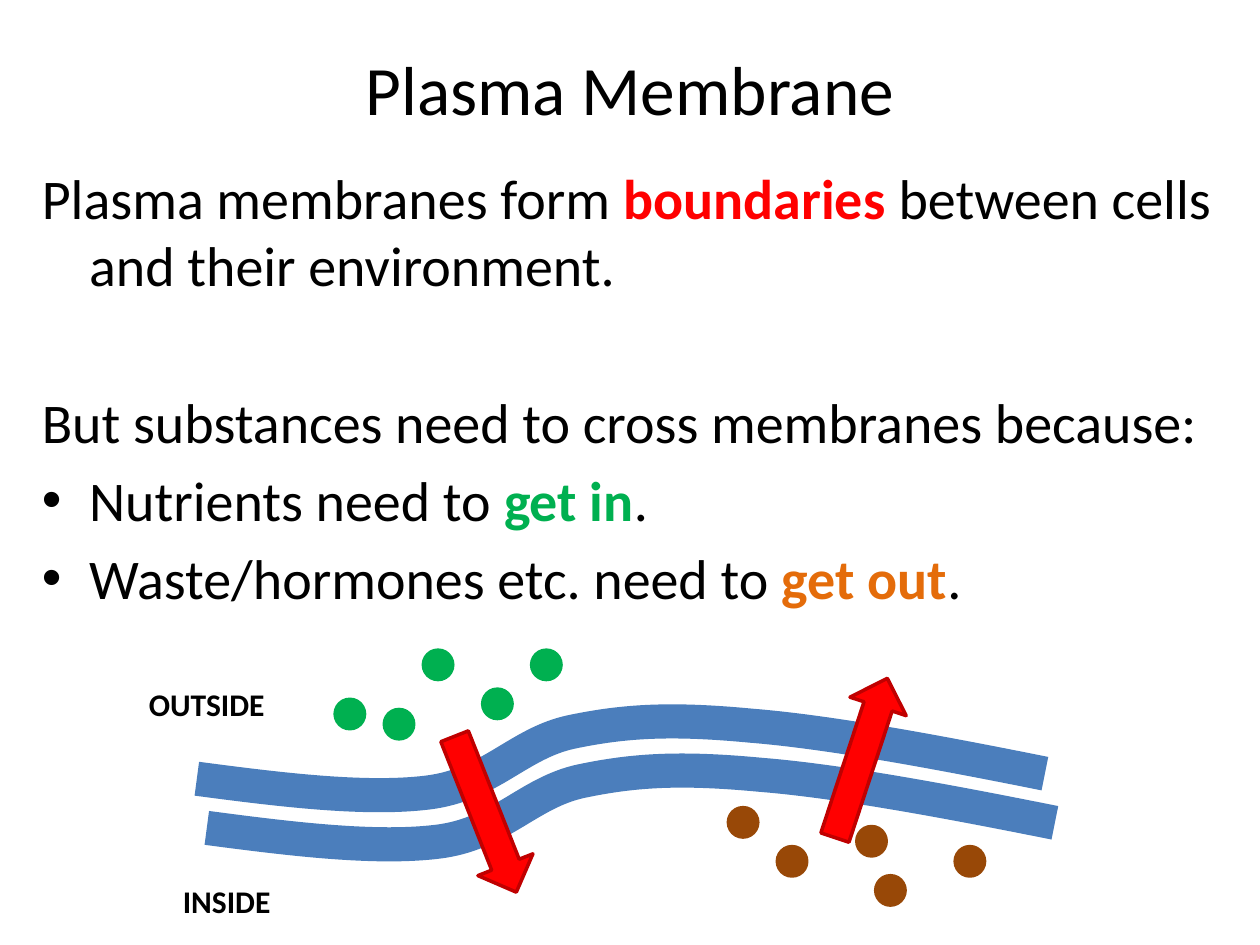
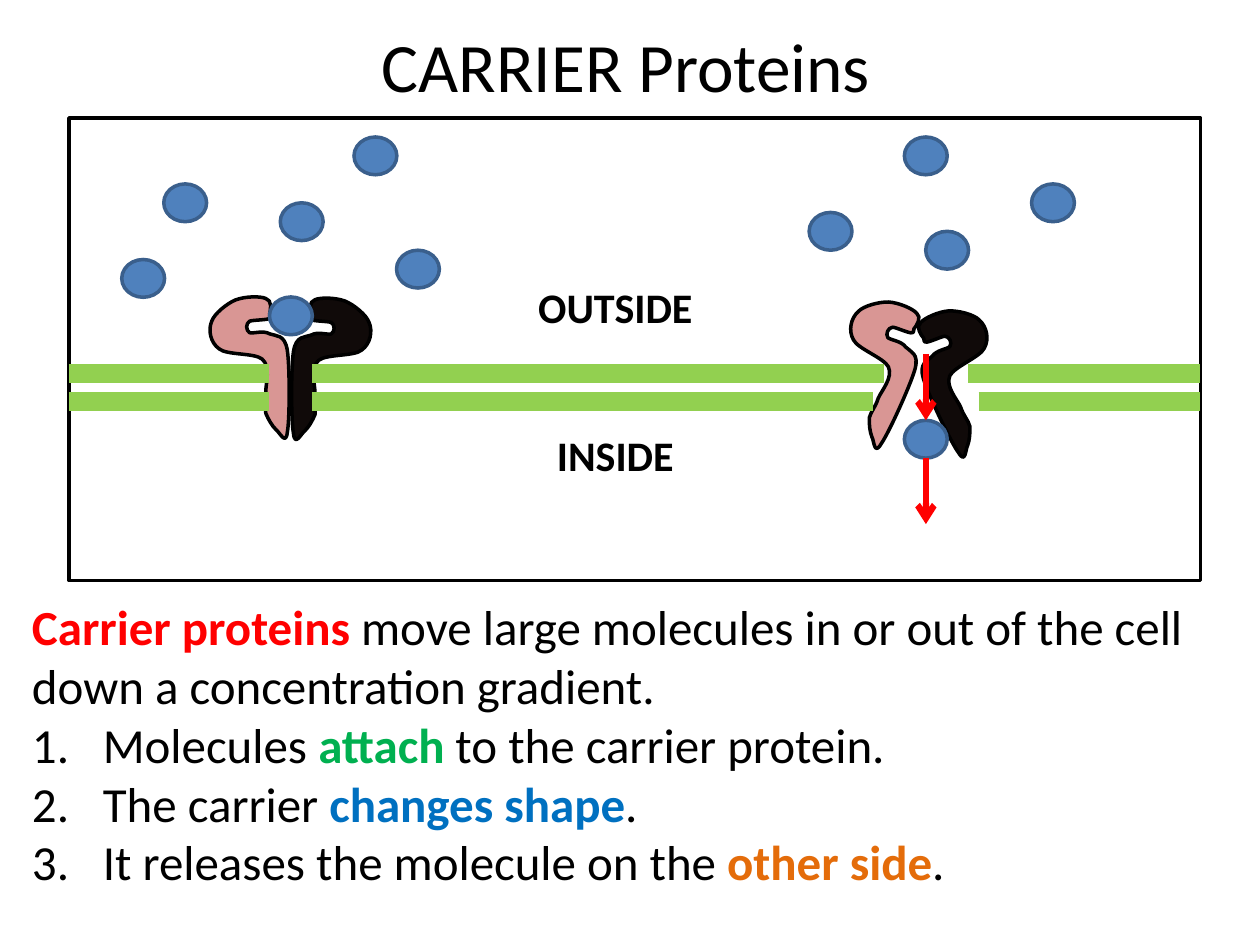
from lxml import etree
from pptx import Presentation
from pptx.dml.color import RGBColor
from pptx.enum import shapes, text
from pptx.oxml import ns
from pptx.util import Pt

FONT = "Calibri"
BLACK, RED, GREEN, ORANGE = "000000", "FF0000", "00B050", "E46C0A"
DARK_RED, BROWN, BLUE = "C00000", "984807", "0070C0"
LIPID_BLUE, LIPID_GREEN = "4B7EBC", "92D050"
MOLECULE, MOLECULE_EDGE = "4F81BD", "3A5F8C"
PINK, PROTEIN_BLACK = "D99694", "100A09"

# Bezier outlines: a start point, then three points for each curve.
LIPID_CURVE = [
    (0, 34.6),
    (48.3, 41), (96.5, 46.8), (131.8, 42.5),
    (167.8, 38.2), (183.6, 14.4), (213.9, 7.9),
    (244.8, 1.4), (271.5, 0), (316.8, 4.3),
    (361.5, 7.9), (423.4, 19.4), (484.6, 31.7),
]
CARRIER_HALF = [
    (33.1, 1.4),
    (30.2, 0), (21.6, 0), (15.8, 2.2),
    (10.8, 4.3), (3.6, 10.1), (2.2, 14.4),
    (0, 19.4), (1.4, 26.6), (6.5, 30.2),
    (10.8, 33.8), (26.6, 32.4), (31, 36),
    (36, 40.3), (33.1, 49.7), (33.1, 54.7),
    (33.8, 59.8), (32.4, 63.4), (33.1, 67),
    (34.6, 70.6), (36.7, 74.2), (38.9, 76.3),
    (41, 77.8), (44.6, 85.7), (45.4, 77.8),
    (46.8, 70.6), (46.8, 40.3), (45.4, 31),
    (43.9, 21.6), (38.9, 23), (35.3, 21.6),
    (31.7, 19.4), (25.9, 21.6), (23.8, 20.9),
    (21.6, 19.4), (21.6, 15.8), (23.8, 14.4),
    (25.2, 13.7), (32.4, 13.7), (34.6, 13),
    (36.7, 12.2), (35.3, 11.5), (35.3, 10.1),
    (36, 7.9), (36.7, 2.2), (33.1, 1.4),
]


def rgb(color):
    return RGBColor.from_string(color)


def paint(shape, fill=None, line=None, weight=2):
    shape.shadow.inherit = False
    if fill:
        shape.fill.solid()
        shape.fill.fore_color.rgb = rgb(fill)
    else:
        shape.fill.background()
    shape.line.color.rgb = rgb(line)
    shape.line.width = Pt(weight)


def add_bullet(paragraph, bullet):
    """Bullet with a character, or number automatically if it is '1.'."""
    properties = paragraph._p.get_or_add_pPr()
    if bullet == "1.":
        etree.SubElement(properties, ns.qn("a:buAutoNum"), type="arabicPeriod")
    else:
        etree.SubElement(properties, ns.qn("a:buFont"), typeface="Arial")
        etree.SubElement(properties, ns.qn("a:buChar"), char=bullet)


def add_text(slide, box, paragraphs, size, bold=False, centred=False, middle=False):
    """Each paragraph is a dict: runs of (words, accent colour or None), and
    optionally hang, before and bullet. Accented runs are bold."""
    frame = slide.shapes.add_textbox(*map(Pt, box)).text_frame
    frame.word_wrap = True
    if middle:
        frame.vertical_anchor = text.MSO_ANCHOR.MIDDLE
    for index, content in enumerate(paragraphs):
        paragraph = frame.add_paragraph() if index else frame.paragraphs[0]
        if centred:
            paragraph.alignment = text.PP_ALIGN.CENTER
        paragraph.space_before = Pt(content.get("before", 0))
        hang = content.get("hang")
        if hang:
            properties = paragraph._p.get_or_add_pPr()
            properties.set("marL", str(Pt(hang)))
            properties.set("indent", str(-Pt(hang)))
        if "bullet" in content:
            add_bullet(paragraph, content["bullet"])
        for words, accent in content["runs"]:
            run = paragraph.add_run()
            run.text = words
            run.font.name = FONT
            run.font.size = Pt(size)
            run.font.bold = bold or accent is not None
            run.font.color.rgb = rgb(accent or BLACK)


def add_title(slide, words, box):
    add_text(slide, box, [{"runs": [(words, None)]}], 39.6, centred=True, middle=True)


def add_label(slide, words, box, size):
    add_text(slide, box, [{"runs": [(words, None)]}], size, bold=True, centred=True)


def add_particles(slide, places, width, height, fill, line):
    for left, top in places:
        particle = slide.shapes.add_shape(
            shapes.MSO_SHAPE.OVAL, Pt(left), Pt(top), Pt(width), Pt(height))
        paint(particle, fill, line)


def add_block_arrow(slide, left, top, angle):
    arrow = slide.shapes.add_shape(
        shapes.MSO_SHAPE.RIGHT_ARROW, Pt(left), Pt(top), Pt(95.8), Pt(33.8))
    arrow.rotation = angle
    paint(arrow, RED, DARK_RED)


def add_line(slide, start, end, color, weight, arrow=False):
    line = slide.shapes.add_connector(
        shapes.MSO_CONNECTOR.STRAIGHT, *map(Pt, (*start, *end)))
    line.line.color.rgb = rgb(color)
    line.line.width = Pt(weight)
    if arrow:
        etree.SubElement(line.line._get_or_add_ln(), ns.qn("a:tailEnd"), type="arrow")
    etree.SubElement(line._element.spPr, ns.qn("a:effectLst"))


def add_curve(slide, curve, left, top, close=False, **colours):
    """Build the outline from its points, then join each three as a Bezier curve."""
    corners = [(Pt(left + x), Pt(top + y)) for x, y in curve]
    builder = slide.shapes.build_freeform(*corners[0])
    builder.add_line_segments(corners[1:], close=close)
    outline = builder.convert_to_shape()
    segments = list(outline._element.iter(ns.qn("a:lnTo")))
    for first in range(0, len(curve) - 1, 3):
        bezier = etree.Element(ns.qn("a:cubicBezTo"))
        segments[first].addprevious(bezier)
        for segment in segments[first:first + 3]:
            bezier.append(segment[0])
            segment.getparent().remove(segment)
    paint(outline, **colours)
    return outline


def add_carrier_half(slide, left, top, fill, mirrored=False, angle=0):
    half = add_curve(slide, CARRIER_HALF, left, top, close=True, fill=fill, line=BLACK)
    half.rotation = angle
    if mirrored:
        half._element.spPr.find(ns.qn("a:xfrm")).set("flipH", "1")


def build_plasma_membrane(slide):
    add_title(slide, "Plasma Membrane", (36, 21.6, 648, 56.9))
    hang = {"hang": 27, "before": 6.4}
    add_text(slide, (16.8, 90, 686, 433.4), [
        {**hang, "runs": [("Plasma membranes form ", None), ("boundaries", RED),
                          (" between cells and their environment.", None)]},
        {**hang, "before": 50.8,
         "runs": [("But substances need to cross membranes because:", None)]},
        {**hang, "bullet": "•",
         "runs": [("Nutrients need to ", None), ("get in", GREEN), (".", None)]},
        {**hang, "bullet": "•",
         "runs": [("Waste/hormones etc. need to ", None), ("get out", ORANGE),
                  (".", None)]},
    ], 32)
    for left, top in ((112.5, 410.4), (118.2, 438.5)):
        add_curve(slide, LIPID_CURVE, left, top, line=LIPID_BLUE, weight=19.5)
    nutrients = [(191.5, 399.6), (275.8, 393.8), (219.6, 405.4),
                 (303.8, 371.5), (241.9, 371.5)]
    wastes = [(444.2, 483.8), (500.4, 500.4), (416.2, 461.5),
              (489.6, 472.3), (545.8, 483.8)]
    for places, color in ((nutrients, GREEN), (wastes, BROWN)):
        add_particles(slide, places, 16.8, 16.8, color, color)
    add_block_arrow(slide, 229.5, 448.4, 68.4)
    add_block_arrow(slide, 444.2, 416.2, 288.2)
    add_label(slide, "OUTSIDE", (62, 388.1, 112.3, 28.8), 18)
    add_label(slide, "INSIDE", (73.4, 500.4, 112.3, 28.8), 18)


def build_carrier_proteins(slide):
    add_title(slide, "CARRIER Proteins", (33.8, 11.2, 648, 51.8))
    left, width = 39.4, 646.6
    right = left + width
    diagram = slide.shapes.add_shape(
        shapes.MSO_SHAPE.RECTANGLE, Pt(left), Pt(67.4), Pt(width), Pt(264.4))
    paint(diagram, line=BLACK)

    add_carrier_half(slide, 118.8, 169.2, PINK)
    add_carrier_half(slide, 166.3, 169.9, PROTEIN_BLACK, mirrored=True)
    add_carrier_half(slide, 474.5, 169.9, PINK, angle=24.4)
    add_carrier_half(slide, 529.2, 174.8, PROTEIN_BLACK, mirrored=True, angle=334.6)

    molecules = [(154, 169.7), (93.6, 105.1), (202.3, 78.3), (226.6, 143),
                 (69.6, 148.3), (160.2, 115.9), (462.4, 121.4), (529, 132.2),
                 (516.8, 78.3), (589.5, 105.1), (516.8, 240.2)]
    add_particles(slide, molecules, 24.5, 21.6, MOLECULE, MOLECULE_EDGE)
    for top, bottom in ((202.3, 240.2), (261.8, 299.5)):
        add_line(slide, (529.1, top), (529.1, bottom), RED, 3.5, arrow=True)

    for y, gap_start, gap_end in ((213.3, 504.9, 553), (229.4, 499, 559.2)):
        for start, end in ((left, 154), (178.3, gap_start), (gap_end, right)):
            add_line(slide, (start, y), (end, y), LIPID_GREEN, 10.75)

    step = {"hang": 40.5, "bullet": "1."}
    add_text(slide, (11.2, 337.4, 697.7, 177.1), [
        {"runs": [("Carrier proteins ", RED),
                  ("move large molecules in or out of the cell down a "
                   "concentration gradient.", None)]},
        {**step, "runs": [("Molecules ", None), ("attach", GREEN),
                          (" to the carrier protein.", None)]},
        {**step, "runs": [("The carrier ", None), ("changes shape", BLUE),
                          (".", None)]},
        {**step, "runs": [("It releases the molecule on the ", None),
                          ("other side", ORANGE), (".", None)]},
    ], 28)
    add_label(slide, "OUTSIDE", (292.6, 157.4, 118.1, 36), 24)
    add_label(slide, "INSIDE", (292.6, 241.9, 118.1, 36), 24)


def main():
    deck = Presentation()
    deck.slide_width, deck.slide_height = Pt(720), Pt(540)
    blank = deck.slide_layouts[6]
    for build in (build_plasma_membrane, build_carrier_proteins):
        build(deck.slides.add_slide(blank))
    deck.save("out.pptx")


if __name__ == "__main__":
    main()
